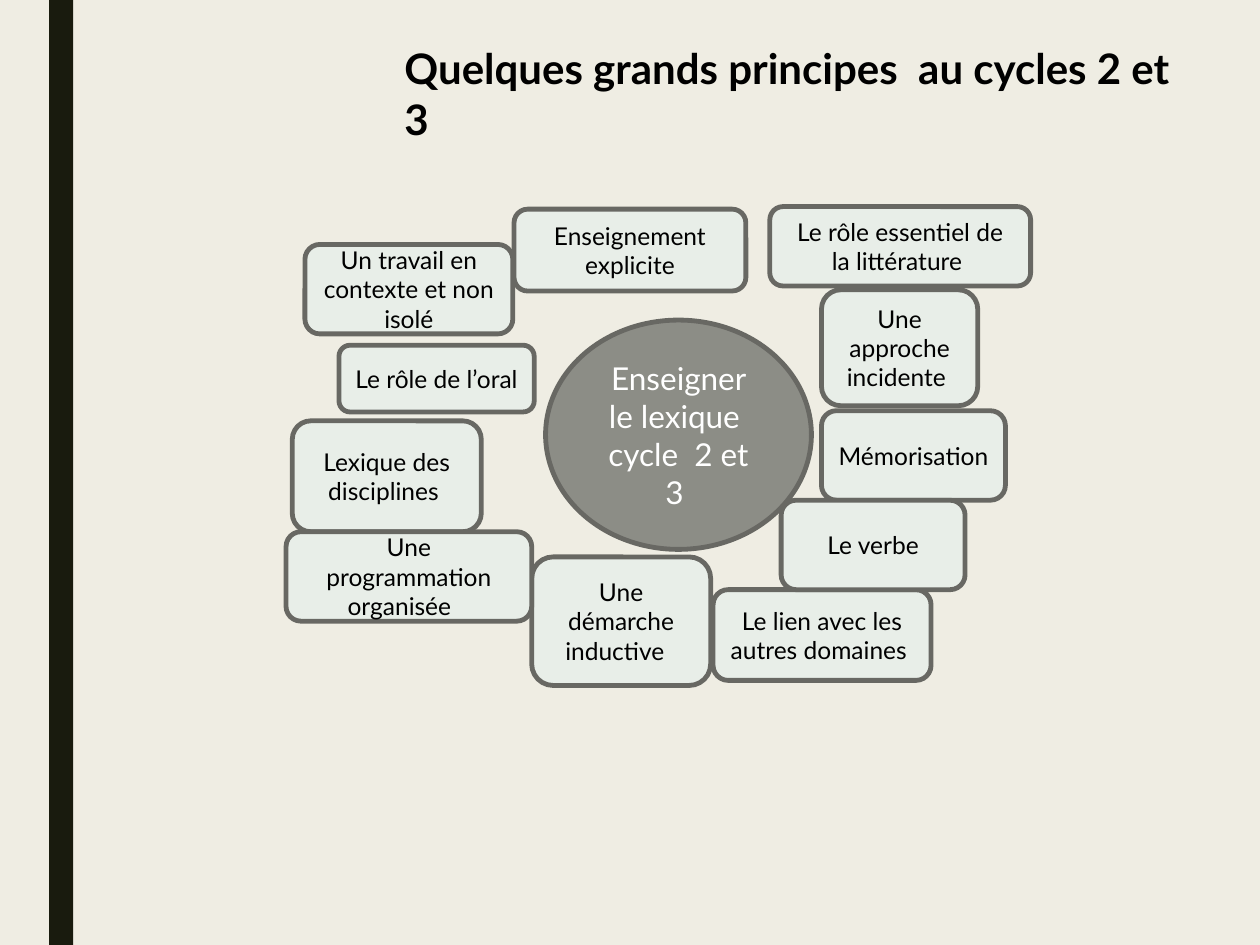
from pptx import Presentation
from pptx.dml.color import RGBColor as RGB
from pptx.enum.shapes import MSO_SHAPE as Kind
from pptx.enum.text import MSO_ANCHOR as Anchor, MSO_AUTO_SIZE as Fit, PP_ALIGN as Align
from pptx.util import Inches, Pt

HEX = {
    "paper": "EFEDE3", "bar": "191B0E", "hub": "8C8D86", "idea": "E8EEE8",
    "edge": "686863", "dark": "000000", "light": "FFFFFF",
}
FONT = "Lato"

# Text and box (left, top, width, height) of each idea around the hub
IDEAS = [
    ("Le rôle de l’oral ", (2.69, 2.74, 1.55, 0.53)),
    ("Enseignement explicite", (4.08, 1.66, 1.84, 0.65)),
    ("Un travail en contexte et non isolé", (2.42, 1.94, 1.65, 0.71)),
    ("Mémorisation ", (6.52, 3.26, 1.46, 0.71)),
    ("Le rôle essentiel de la littérature ", (6.11, 1.64, 2.07, 0.63)),
    ("Une démarche inductive  ", (4.22, 4.42, 1.42, 1.02)),
    ("Lexique des disciplines ", (2.32, 3.34, 1.5, 0.88)),
    ("Le lien avec les autres domaines ", (5.66, 4.68, 1.73, 0.72)),
    ("Une programmation organisée   ", (2.27, 4.22, 1.95, 0.71)),
    ("Le verbe", (6.2, 3.97, 1.46, 0.71)),
    ("Une approche incidente ", (6.52, 2.3, 1.24, 0.92)),
]


def tint(name):
    return RGB.from_string(HEX[name])


def put(item, values):
    """Set each named value as an attribute of the item."""
    for name, value in values.items():
        setattr(item, name, value)


def write(shape, lines, size, color, align, anchor, bold=False):
    """Fill a shape with one paragraph for each line."""
    frame = shape.text_frame
    frame.text = "\n".join(lines)
    put(frame, {"word_wrap": True, "auto_size": Fit.NONE, "vertical_anchor": anchor})
    for par in frame.paragraphs:
        par.alignment = align
        for run in par.runs:
            put(run.font, {"name": FONT, "size": Pt(size), "bold": bold})
            run.font.color.rgb = tint(color)


def add_box(slide, kind, box, fill, edge=None):
    shape = slide.shapes.add_shape(kind, *map(Inches, box))
    shape.shadow.inherit = False
    shape.fill.solid()
    shape.fill.fore_color.rgb = tint(fill)
    if edge:
        shape.line.color.rgb = tint(edge)
        shape.line.width = Pt(2.75)
    else:
        shape.line.fill.background()
    return shape


def add_title(slide, box, text):
    title = slide.shapes.title
    put(title, dict(zip(("left", "top", "width", "height"), map(Inches, box))))
    write(title, [text], 24, "dark", Align.LEFT, Anchor.TOP, True)


def add_hub(slide, box, lines):
    hub = add_box(slide, Kind.OVAL, box, "hub", "edge")
    write(hub, lines, 18, "light", Align.CENTER, Anchor.MIDDLE)


def add_idea(slide, box, text):
    idea = add_box(slide, Kind.ROUNDED_RECTANGLE, box, "idea", "edge")
    write(idea, [text], 14, "dark", Align.CENTER, Anchor.MIDDLE)


def main():
    deck = Presentation()
    put(deck, {"slide_width": Inches(10), "slide_height": Inches(7.5)})
    slide = deck.slides.add_slide(deck.slide_layouts[5])
    slide.background.fill.solid()
    slide.background.fill.fore_color.rgb = tint("paper")

    add_box(slide, Kind.RECTANGLE, (0.39, 0, 0.19, 7.5), "bar")
    add_title(slide, (3.11, 0.29, 6.46, 0.5), "Quelques grands principes  au cycles 2 et 3")
    add_hub(slide, (4.33, 2.54, 2.11, 1.82), ["Enseigner le lexique ", "cycle  2 et 3 "])
    for text, box in IDEAS:
        add_idea(slide, box, text)
    deck.save("out.pptx")


if __name__ == "__main__":
    main()
